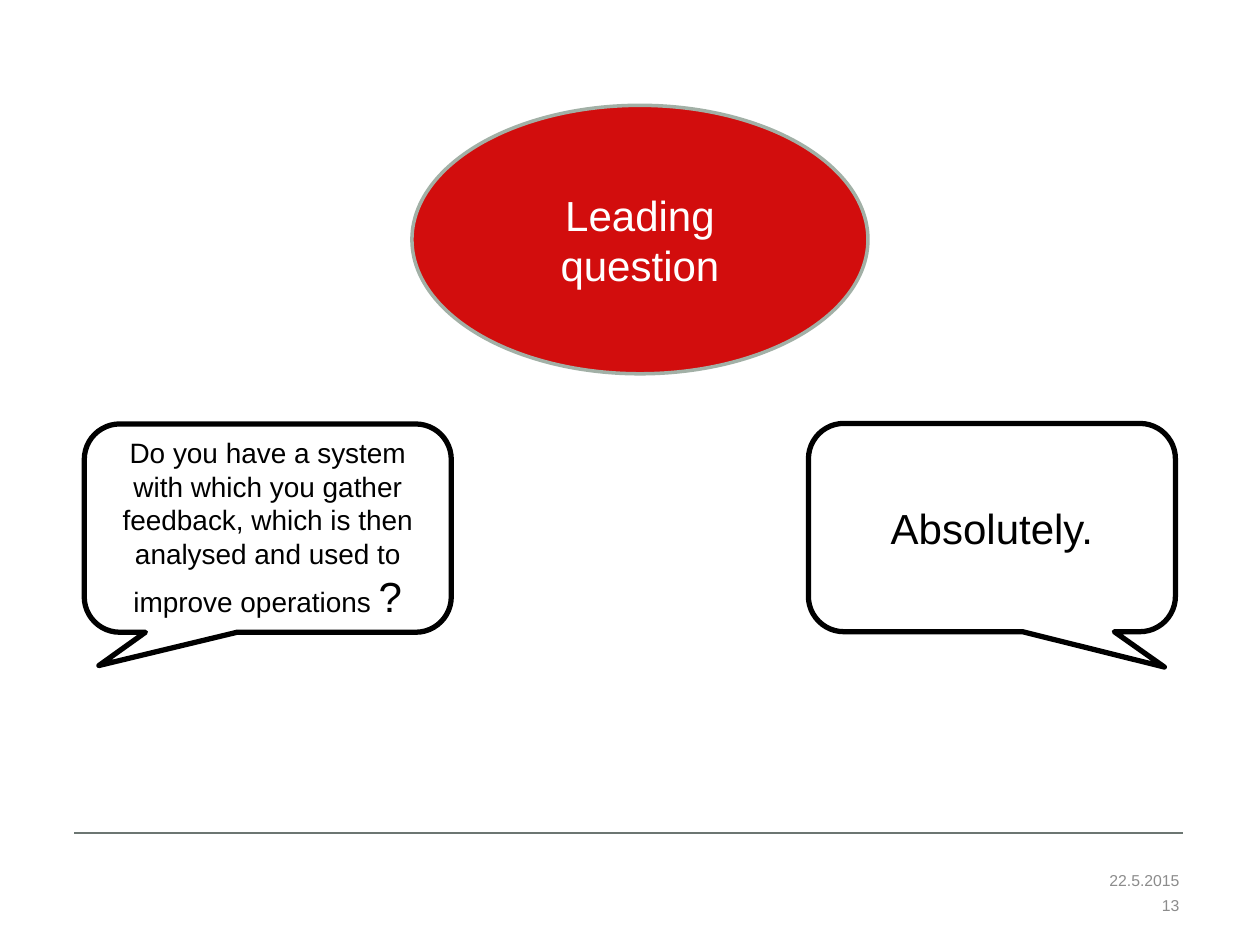
from lxml import etree
from pptx import Presentation
from pptx.dml.color import RGBColor
from pptx.enum.shapes import MSO_CONNECTOR, MSO_SHAPE
from pptx.enum.text import MSO_ANCHOR, PP_ALIGN
from pptx.oxml.ns import qn
from pptx.util import Pt

STRAIGHT = MSO_CONNECTOR.STRAIGHT
ELLIPSE = MSO_SHAPE.OVAL
CALLOUT = MSO_SHAPE.ROUNDED_RECTANGULAR_CALLOUT
MIDDLE = MSO_ANCHOR.MIDDLE
CENTER, RIGHT = PP_ALIGN.CENTER, PP_ALIGN.RIGHT

FONT = "Arial"
BLACK, WHITE, RED = "000000", "FFFFFF", "D20D0D"
OUTLINE, RULE, FOOTER = "A2B0A6", "6C7672", "8C8C8C"


def rgb(color):
    return RGBColor.from_string(color)


def write(tf, paragraphs, color, align):
    """Fill a text frame; each paragraph is a list of (text, size) runs."""
    tf.word_wrap = True
    tf.vertical_anchor = MIDDLE
    for i, runs in enumerate(paragraphs):
        p = tf.paragraphs[0] if i == 0 else tf.add_paragraph()
        p.alignment = align
        for text, size in runs:
            r = p.add_run()
            r.text = text
            r.font.name = FONT
            r.font.size = Pt(size)
            r.font.color.rgb = rgb(color)


def add_filled_shape(s, kind, box, fill, line, width):
    sp = s.shapes.add_shape(kind, *map(Pt, box))
    sp.shadow.inherit = False
    sp.fill.solid()
    sp.fill.fore_color.rgb = rgb(fill)
    sp.line.color.rgb = rgb(line)
    sp.line.width = Pt(width)
    return sp


def add_topic(s, box, text):
    sp = add_filled_shape(s, ELLIPSE, box, RED, OUTLINE, 2)
    write(sp.text_frame, [[(text, 24)]], WHITE, CENTER)


def add_speech(s, box, tail, paragraphs):
    """Speech bubble; tail is the tip's offset from the centre as a share of the box."""
    sp = add_filled_shape(s, CALLOUT, box, WHITE, BLACK, 3)
    for i, value in enumerate((*tail, 0.17)):
        sp.adjustments[i] = value
    write(sp.text_frame, paragraphs, BLACK, CENTER)


def add_footer(s, box, lines):
    """Rule along the top of the box, with right-aligned lines near its bottom."""
    left, top, width, height = box
    rule = s.shapes.add_connector(STRAIGHT, Pt(left), Pt(top), Pt(left + width), Pt(top))
    rule.line.color.rgb = rgb(RULE)
    rule.line.width = Pt(0.75)
    etree.SubElement(rule._element.spPr, qn("a:effectLst"))
    text_width, pitch = 285, 14
    text_left = left + width - text_width - 2
    first = top + height - pitch * len(lines)
    for i, line in enumerate(lines):
        tb = s.shapes.add_textbox(Pt(text_left), Pt(first + i * pitch), Pt(text_width), Pt(pitch))
        tb.text_frame.margin_right = 0
        write(tb.text_frame, [[(line, 9)]], FOOTER, RIGHT)


def main():
    prs = Presentation()
    prs.slide_width, prs.slide_height = Pt(720), Pt(540)
    s = prs.slides.add_slide(prs.slide_layouts[6])
    add_footer(s, (42.5, 476, 633.5, 48), ["22.5.2015", "13"])
    add_topic(s, (235.4, 60.2, 260.6, 153.4), "Leading question")
    question = "Do you have a system with which you gather feedback, which is then analysed and used to"
    add_speech(s, (48.2, 242.3, 209.7, 119), (-0.46, 0.66),
               [[(question, 16)], [("improve operations ", 16), ("?", 24)]])
    add_speech(s, (462, 242, 209.7, 119), (0.47, 0.67), [[("Absolutely.", 24)]])
    prs.save("out.pptx")


if __name__ == "__main__":
    main()
